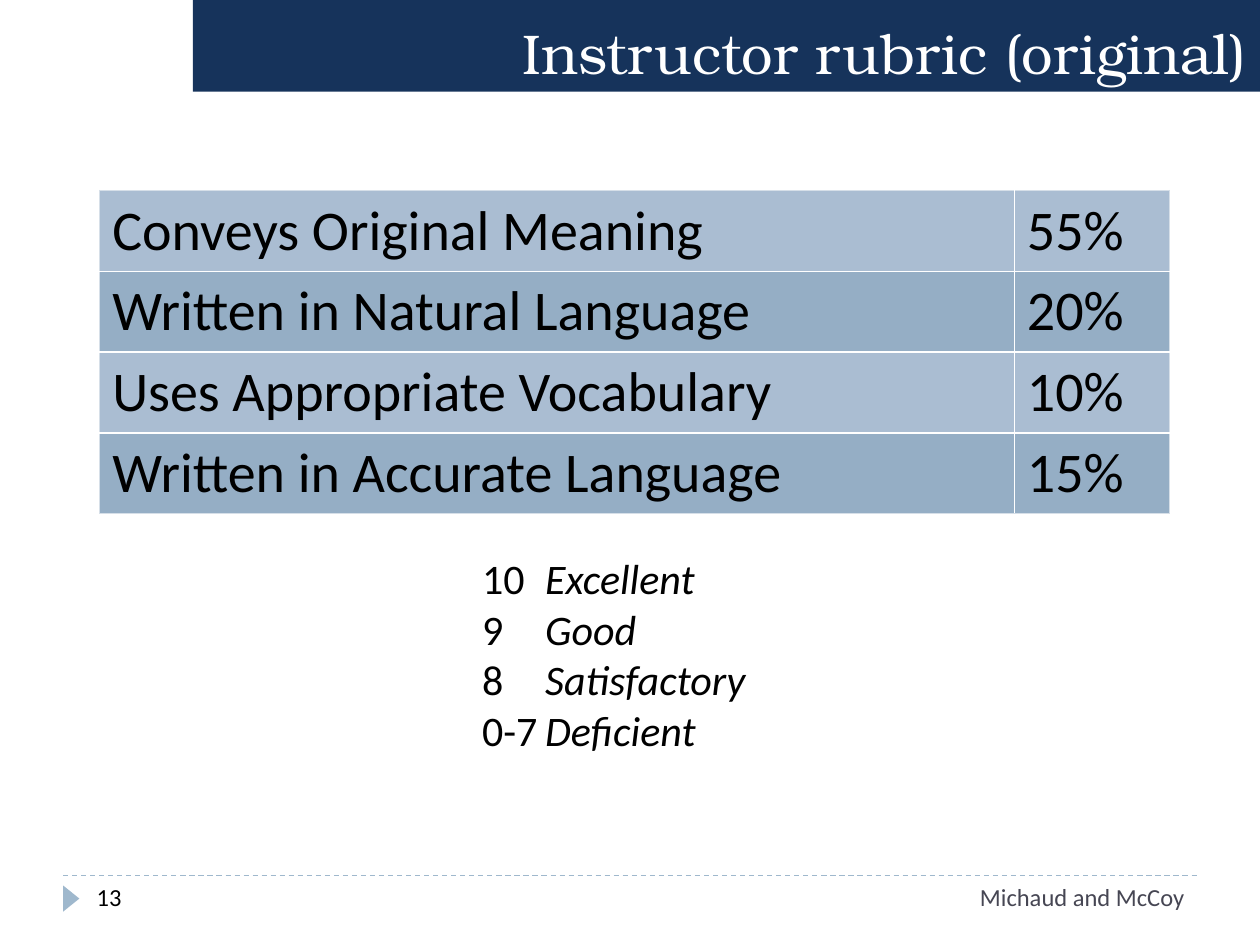
from lxml.etree import SubElement
from pptx import Presentation
from pptx.dml.color import RGBColor
from pptx.enum.dml import MSO_LINE
from pptx.enum.shapes import MSO_CONNECTOR, MSO_SHAPE
from pptx.enum.text import MSO_ANCHOR, PP_ALIGN
from pptx.oxml.ns import qn
from pptx.util import Cm, Pt

HUES = {"navy": "16335B", "sky": "9FB8CD", "edge": "D6DFE8", "light": "AABDD2",
        "dark": "95AEC5", "white": "FFFFFF", "black": "000000", "gray": "464653"}
RUBRIC = [("Conveys Original Meaning", "55%"), ("Written in Natural Language", "20%"),
          ("Uses Appropriate Vocabulary", "10%"), ("Written in Accurate Language", "15%")]
SCALE = [("10", "Excellent"), ("9", "Good"), ("8", "Satisfactory"), ("0-7", "Deficient")]


def hue(name):
    """Return the named colour."""
    return RGBColor.from_string(HUES[name])


def style(run, size, tone="black", face="Calibri", slant=False):
    """Set the font of a run."""
    font = run.font
    font.name, font.size, font.italic = face, Pt(size), slant
    font.color.rgb = hue(tone)


def paint(fill, tone):
    """Give a fill one solid colour."""
    fill.solid()
    fill.fore_color.rgb = hue(tone)


def place(shape, x, y, w, h):
    """Move and size a shape in centimetres."""
    shape.left, shape.top, shape.width, shape.height = Cm(x), Cm(y), Cm(w), Cm(h)


def label(slide, x, y, w, h, text, tone="black", align=PP_ALIGN.LEFT):
    """Add one line of small text."""
    box = slide.shapes.add_textbox(Cm(x), Cm(y), Cm(w), Cm(h))
    box.text_frame.word_wrap = True
    para = box.text_frame.paragraphs[0]
    para.text, para.alignment = text, align
    style(para.runs[0], 14, tone)


def edge(cell, sides):
    """Draw thin borders on the given sides of a cell."""
    props = cell._tc.get_or_add_tcPr()
    for spot, side in enumerate(sides):
        line = props.makeelement(qn(f"a:ln{side}"), {"w": str(Pt(0.75))})
        fill = SubElement(line, qn("a:solidFill"))
        SubElement(fill, qn("a:srgbClr"), val=HUES["edge"])
        props.insert(spot, line)


def banner(slide, x, y, w, h):
    """Fill the title band at the top."""
    title = slide.shapes.title
    place(title, x, y, w, h)
    paint(title.fill, "navy")
    frame = title.text_frame
    frame.text = "Instructor rubric (original)"
    frame.vertical_anchor = MSO_ANCHOR.BOTTOM
    para = frame.paragraphs[0]
    para.alignment = PP_ALIGN.RIGHT
    style(para.runs[0], 32, "white", "TeX Gyre Bonum")


def rubric(slide, x, y, w, h):
    """Add the table of criteria and weights."""
    last = len(RUBRIC) - 1
    table = slide.shapes.add_table(len(RUBRIC), 2, Cm(x), Cm(y), Cm(w), Cm(h)).table
    table.first_row = table.horz_banding = False
    table.columns[0].width, table.columns[1].width = Cm(w - 3.12), Cm(3.12)
    for i, row in enumerate(RUBRIC):
        for j, text in enumerate(row):
            cell = table.cell(i, j)
            cell.text = text
            style(cell.text_frame.paragraphs[0].runs[0], 32)
            paint(cell.fill, "dark" if i % 2 else "light")
            edge(cell, "LR"[j] + "T" * (i == 0) + "B" * (i == last))


def scale(slide, x, y, w, h):
    """List the grades and their meaning."""
    frame = slide.shapes.add_textbox(Cm(x), Cm(y), Cm(w), Cm(h)).text_frame
    frame.word_wrap = True
    for i, (mark, sense) in enumerate(SCALE):
        para = frame.add_paragraph() if i else frame.paragraphs[0]
        for text, slant in ((mark + "\t", False), (sense, True)):
            run = para.add_run()
            run.text = text
            style(run, 24, slant=slant)


def footer(slide, x, y, w, h):
    """Add the dashed rule, marker, page number and authors."""
    rule = slide.shapes.add_connector(MSO_CONNECTOR.STRAIGHT, Cm(x), Cm(y), Cm(x + w), Cm(y))
    rule.line.color.rgb = hue("sky")
    rule.line.width, rule.line.dash_style = Pt(0.75), MSO_LINE.DASH
    SubElement(rule._element.spPr, qn("a:effectLst"))
    mark = slide.shapes.add_shape(MSO_SHAPE.ISOSCELES_TRIANGLE, Cm(x - 0.1), Cm(y + 0.3),
                                  Cm(0.53), Cm(0.33))
    mark.rotation, mark.shadow.inherit = 90, False
    paint(mark.fill, "sky")
    mark.line.fill.background()
    label(slide, x + 0.43, y, 5.5, h, "13")
    label(slide, x + w - 16.08, y, 16.08, h, "Michaud and McCoy", "gray", PP_ALIGN.RIGHT)


def main():
    """Build and save the slide."""
    deck = Presentation()
    deck.slide_width, deck.slide_height = Cm(25.4), Cm(19.05)
    slide = deck.slides.add_slide(deck.slide_layouts[5])
    footer(slide, 1.27, 17.65, 22.86, 1.02)
    banner(slide, 3.89, 0, 21.51, 1.85)
    rubric(slide, 2.01, 3.84, 21.56, 6.52)
    scale(slide, 9.47, 11.02, 7.24, 4.37)
    deck.save("out.pptx")


if __name__ == "__main__":
    main()
